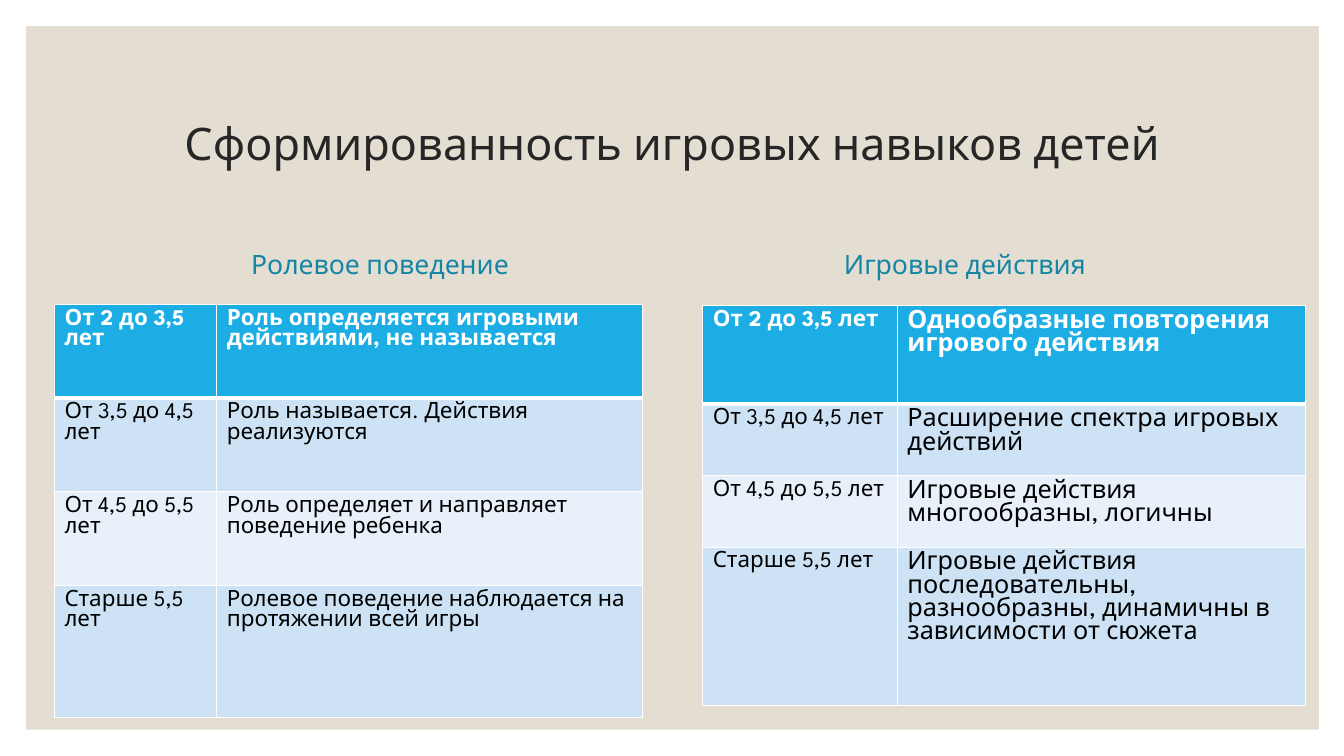
from lxml import etree
from pptx import Presentation
from pptx import util as u
from pptx.dml.color import RGBColor
from pptx.enum import shapes, text
from pptx.oxml.ns import qn

COLORS = {
    "panel": "E3DED1", "title": "262626", "heading": "1485A4",
    "header": "1CADE4", "band": "CDE3F5", "light": "E8F1FA",
    "white": "FFFFFF", "black": "000000",
}
FONT = "League Spartan"
AGES = ["От 2 до 3,5 лет", "От 3,5 до 4,5 лет", "От 4,5 до 5,5 лет", "Старше 5,5 лет"]
ROLES = [
    "Роль определяется игровыми действиями, не называется",
    "Роль называется. Действия реализуются",
    "Роль определяет и направляет поведение ребенка",
    "Ролевое поведение наблюдается на протяжении всей игры",
]
ACTIONS = [
    "Однообразные повторения игрового действия",
    "Расширение спектра игровых действий",
    "Игровые действия многообразны, логичны",
    "Игровые действия последовательны, разнообразны, динамичны в зависимости от сюжета",
]


def rgb(name):
    return RGBColor.from_string(COLORS[name])


class SlideBuilder:
    def __init__(self, slide):
        self.s = slide

    def panel(self, *box):
        sp = self.s.shapes.add_shape(shapes.MSO_SHAPE.RECTANGLE, *map(u.Inches, box))
        sp.shadow.inherit = False
        sp.fill.solid()
        sp.fill.fore_color.rgb = rgb("panel")
        sp.line.fill.background()

    def style(self, p, size, color, bold=False):
        p.font.name = FONT
        p.font.size = u.Pt(size)
        p.font.bold = bold
        p.font.color.rgb = rgb(color)

    def label(self, words, box, size, color, spacing=1.0):
        tf = self.s.shapes.add_textbox(*map(u.Inches, box)).text_frame
        tf.word_wrap = True
        tf.vertical_anchor = text.MSO_ANCHOR.MIDDLE
        p = tf.paragraphs[0]
        p.text = words
        p.alignment = text.PP_ALIGN.CENTER
        p.line_spacing = spacing
        self.style(p, size, color)

    def borders(self, cell, top, bottom):
        tcPr = cell._tc.get_or_add_tcPr()
        for side, width in (("L", 1), ("R", 1), ("T", top), ("B", bottom)):
            ln = etree.SubElement(tcPr, qn(f"a:ln{side}"), w=str(u.Pt(width)))
            fill = etree.SubElement(ln, qn("a:solidFill"))
            etree.SubElement(fill, qn("a:srgbClr"), val=COLORS["white"])

    def table(self, left, top, widths, heights, columns, sizes):
        frame = self.s.shapes.add_table(
            len(heights), len(widths), u.Inches(left), u.Inches(top),
            u.Inches(sum(widths)), u.Inches(sum(heights)))
        tbl = frame.table
        for col, width in zip(tbl.columns, widths):
            col.width = u.Inches(width)
        for i, height in enumerate(heights):
            tbl.rows[i].height = u.Inches(height)
            fill = "header" if i == 0 else "band" if i % 2 else "light"
            for j, size in enumerate(sizes):
                cell = tbl.cell(i, j)
                p = cell.text_frame.paragraphs[0]
                p.text = columns[j][i]
                self.style(p, size, "black" if i else "white", bold=i == 0)
                self.borders(cell, 3 if i == 1 else 1, 1 if i else 3)
                cell.fill.solid()
                cell.fill.fore_color.rgb = rgb(fill)


def main():
    prs = Presentation()
    prs.slide_width, prs.slide_height = u.Inches(13.33), u.Inches(7.5)
    b = SlideBuilder(prs.slides.add_slide(prs.slide_layouts[6]))

    # Background panel and title
    b.panel(0.26, 0.26, 12.82, 6.98)
    b.label("Сформированность игровых навыков детей", (1.17, 0.7, 11, 1.5), 32, "title", 0.9)

    # Role behaviour
    b.label("Ролевое поведение", (1.17, 2.27, 5.2, 0.7), 19, "heading")
    b.table(0.54, 3.02, [1.61, 4.22], [0.93, 0.93, 0.93, 1.31], [AGES, ROLES], [16, 16])

    # Play actions
    b.label("Игровые действия", (6.97, 2.27, 5.2, 0.7), 19, "heading")
    b.table(6.97, 3.03, [1.93, 4.05], [0.98, 0.71, 0.71, 1.57], [AGES, ACTIONS], [16, 18])

    prs.save("out.pptx")


if __name__ == "__main__":
    main()
